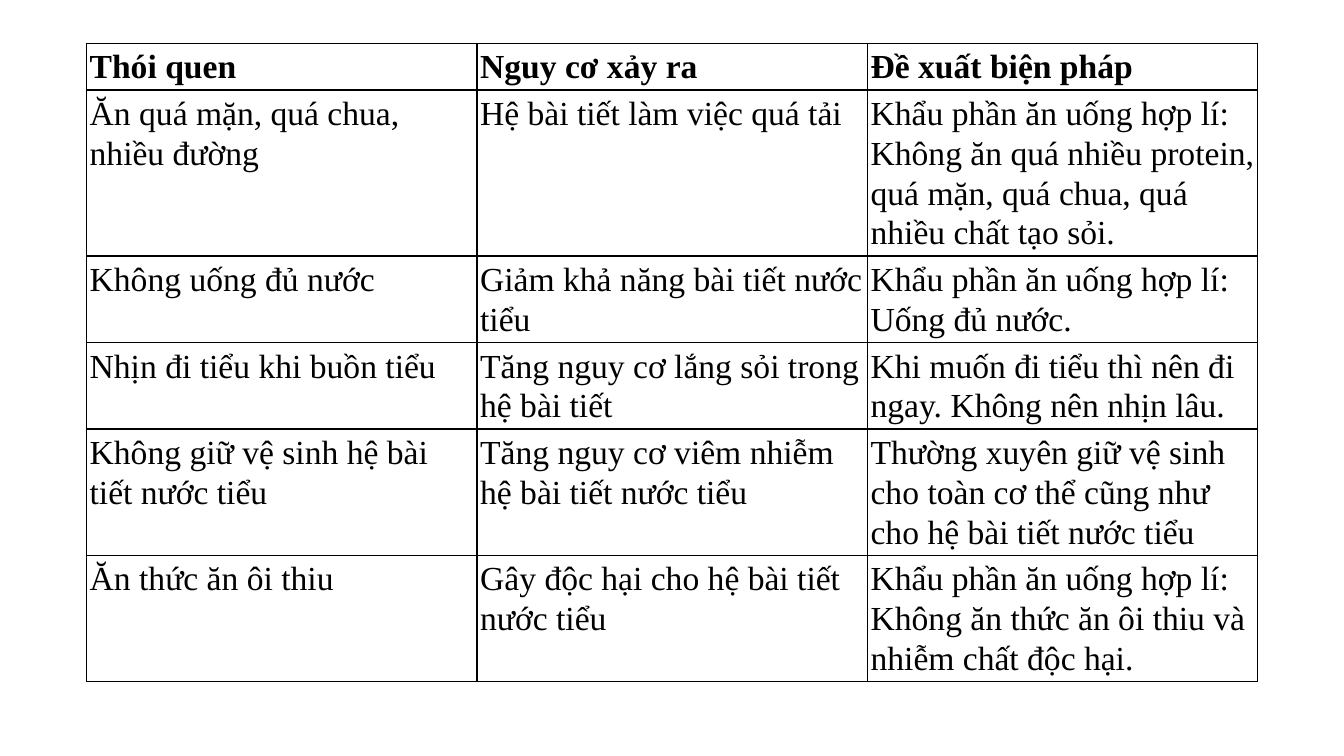
"""Build a slide with a table of habits, their risks and suggested measures."""
from dataclasses import dataclass

from lxml import etree
from pptx import Presentation
from pptx.dml.color import RGBColor
from pptx.oxml.ns import qn
from pptx.table import Table, _Cell
from pptx.util import Cm, Pt

COLORS = {"text": "000000", "border": "000000", "fill": "FFFFFF"}
FONT = "Times New Roman"
LEFT, TOP, COL_WIDTH = 2.18, 1.09, 9.84
LINE_HEIGHT, ROW_PADDING, INSET = 1.0, 0.18, 0.08


@dataclass(frozen=True)
class Row:
    """Texts of one table row and the number of lines it takes."""

    habit: str
    risk: str
    measure: str
    lines: int
    bold: bool = False


ROWS = [
    Row("Thói quen", "Nguy cơ xảy ra", "Đề xuất biện pháp", 1, bold=True),
    Row("Ăn quá mặn, quá chua, nhiều đường",
        "Hệ bài tiết làm việc quá tải",
        "Khẩu phần ăn uống hợp lí: Không ăn quá nhiều protein, quá mặn, "
        "quá chua, quá nhiều chất tạo sỏi.", 4),
    Row("Không uống đủ nước",
        "Giảm khả năng bài tiết nước tiểu",
        "Khẩu phần ăn uống hợp lí: Uống đủ nước.", 2),
    Row("Nhịn đi tiểu khi buồn tiểu",
        "Tăng nguy cơ lắng sỏi trong hệ bài tiết",
        "Khi muốn đi tiểu thì nên đi ngay. Không nên nhịn lâu.", 2),
    Row("Không giữ vệ sinh hệ bài tiết nước tiểu",
        "Tăng nguy cơ viêm nhiễm hệ bài tiết nước tiểu",
        "Thường xuyên giữ vệ sinh cho toàn cơ thể cũng như "
        "cho hệ bài tiết nước tiểu", 3),
    Row("Ăn thức ăn ôi thiu",
        "Gây độc hại cho hệ bài tiết nước tiểu",
        "Khẩu phần ăn uống hợp lí: Không ăn thức ăn ôi thiu và "
        "nhiễm chất độc hại.", 3),
]


def write_text(cell: _Cell, content: str, *, size: float = 24,
               bold: bool = False, color: str = "text",
               spacing: float = 1.07) -> None:
    """Write formatted text into a cell."""
    p = cell.text_frame.paragraphs[0]
    p.line_spacing = spacing
    r = p.add_run()
    r.text = content
    r.font.name, r.font.size, r.font.bold = FONT, Pt(size), bold
    r.font.color.rgb = RGBColor.from_string(COLORS[color])


def add_borders(cell: _Cell, width: float = 1) -> None:
    """Draw a solid line on all four sides of a cell."""
    props = cell._tc.get_or_add_tcPr()
    for i, side in enumerate(("lnL", "lnR", "lnT", "lnB")):
        line = etree.Element(qn(f"a:{side}"), w=str(Pt(width)))
        fill = etree.SubElement(line, qn("a:solidFill"))
        etree.SubElement(fill, qn("a:srgbClr"), val=COLORS["border"])
        props.insert(i, line)


def format_cell(cell: _Cell) -> None:
    """Set the fill, margins and borders of a cell."""
    cell.fill.solid()
    cell.fill.fore_color.rgb = RGBColor.from_string(COLORS["fill"])
    cell.margin_left = cell.margin_right = Cm(INSET)
    cell.margin_top = cell.margin_bottom = Cm(INSET)
    add_borders(cell)


def fill_row(table: Table, index: int, row: Row) -> None:
    """Size one table row and fill its cells."""
    table.rows[index].height = Cm(row.lines * LINE_HEIGHT + ROW_PADDING)
    for col, content in enumerate((row.habit, row.risk, row.measure)):
        cell = table.cell(index, col)
        format_cell(cell)
        write_text(cell, content, bold=row.bold)


def main() -> None:
    """Create the presentation and save it."""
    prs = Presentation()
    prs.slide_width, prs.slide_height = Cm(33.87), Cm(19.05)
    s = prs.slides.add_slide(prs.slide_layouts[6])
    height = sum(row.lines * LINE_HEIGHT + ROW_PADDING for row in ROWS)
    table = s.shapes.add_table(len(ROWS), 3, Cm(LEFT), Cm(TOP),
                               Cm(3 * COL_WIDTH), Cm(height)).table
    table.first_row = table.horz_banding = False
    for column in table.columns:
        column.width = Cm(COL_WIDTH)
    for i, row in enumerate(ROWS):
        fill_row(table, i, row)
    prs.save("out.pptx")


if __name__ == "__main__":
    main()
